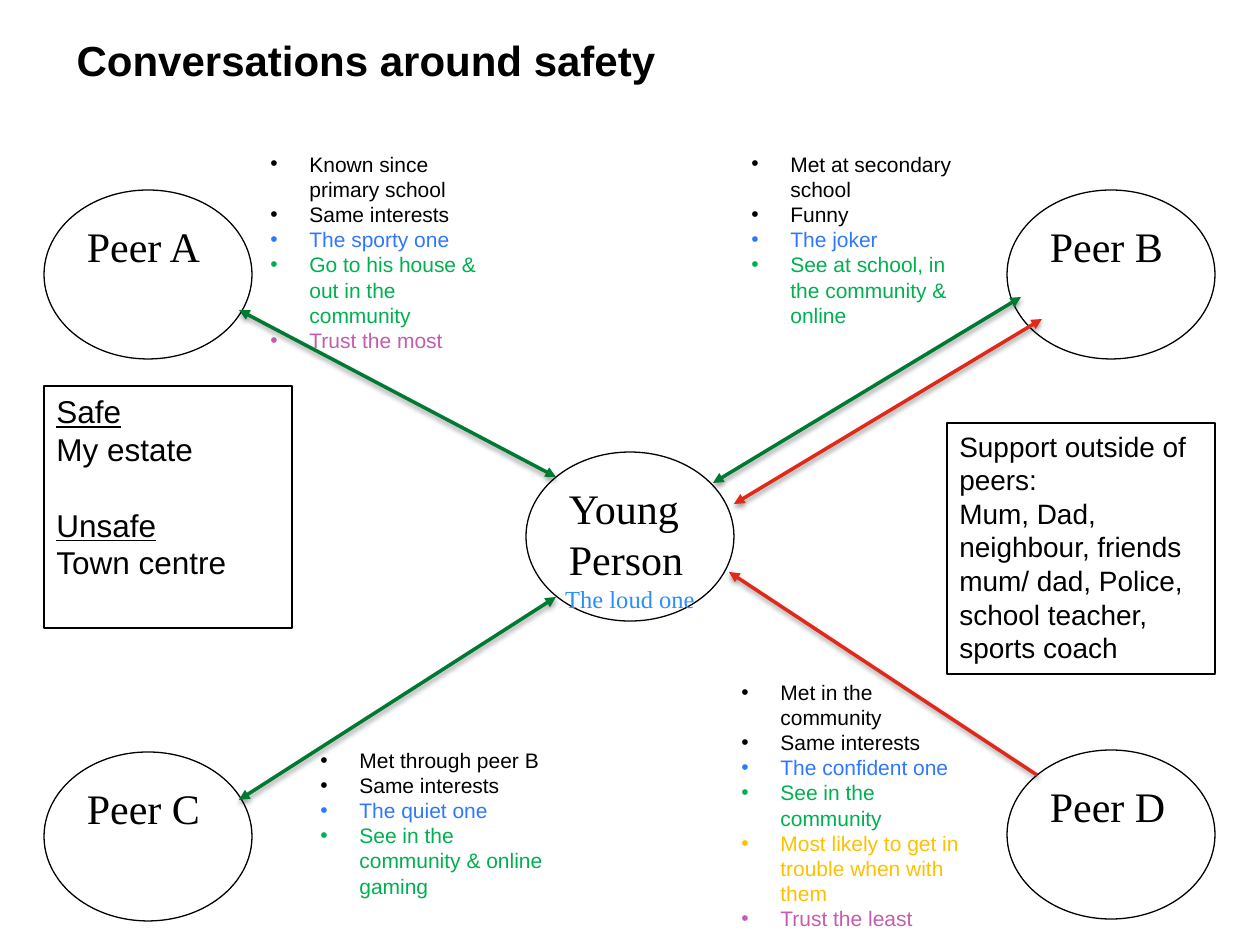
from dataclasses import dataclass

import lxml.etree
import pptx
import pptx.util
from pptx.dml.color import RGBColor
from pptx.enum.shapes import MSO_CONNECTOR, MSO_SHAPE
from pptx.enum.text import MSO_ANCHOR, PP_ALIGN
from pptx.oxml.ns import qn

SCALE = 914400 / 126  # EMU in one px
BLACK = RGBColor(0x00, 0x00, 0x00)
WHITE = RGBColor(0xFF, 0xFF, 0xFF)
BLUE = RGBColor(0x2E, 0x77, 0xFF)
SKY = RGBColor(0x29, 0x8E, 0xFF)
GREEN = RGBColor(0x00, 0xB0, 0x50)
PINK = RGBColor(0xC5, 0x5C, 0xAC)
GOLD = RGBColor(0xFF, 0xC0, 0x00)
SAFE = RGBColor(0x00, 0x7A, 0x33)
RISK = RGBColor(0xE1, 0x29, 0x1A)
SANS, SERIF = "Arial", "Times New Roman"
OVAL_W, OVAL_H = 208, 169
NOTE_W = 248
INDENT = 39


@dataclass
class Person:
    name: str
    left: int
    top: int


@dataclass
class Note:
    left: int
    top: int
    height: int
    lines: list[tuple[str, RGBColor]]


@dataclass
class Panel:
    left: int
    top: int
    width: int
    height: int
    size: int
    lines: list[str]


@dataclass
class Link:
    start: tuple[int, int]
    end: tuple[int, int]
    color: RGBColor
    ends: tuple[str, ...] = ("headEnd", "tailEnd")


PEOPLE = [
    Person("Young Person", 526, 452),
    Person("Peer A", 44, 190),
    Person("Peer B", 1007, 190),
    Person("Peer C", 44, 752),
    Person("Peer D", 1007, 750),
]
NOTES = [
    Note(258, 145, 242, [
        ("Known since primary school", BLACK),
        ("Same interests", BLACK),
        ("The sporty one", BLUE),
        ("Go to his house & out in the community", GREEN),
        ("Trust the most", PINK),
    ]),
    Note(739, 145, 217, [
        ("Met at secondary school", BLACK),
        ("Funny", BLACK),
        ("The joker", BLUE),
        ("See at school, in the community & online", GREEN),
    ]),
    Note(308, 741, 217, [
        ("Met through peer B", BLACK),
        ("Same interests", BLACK),
        ("The quiet one", BLUE),
        ("See in the community & online gaming", GREEN),
    ]),
    Note(729, 673, 292, [
        ("Met in the community", BLACK),
        ("Same interests", BLACK),
        ("The confident one", BLUE),
        ("See in the community", GREEN),
        ("Most likely to get in trouble when with them", GOLD),
        ("Trust the least", PINK),
    ]),
]
PLACES = Panel(44, 386, 248, 242, 18,
               ["Safe", "My estate", "Unsafe", "Town centre"])
SUPPORT = Panel(947, 423, 268, 251, 16, [
    "Support outside of peers:",
    "Mum, Dad, neighbour, friends mum/ dad, Police, school teacher, "
    "sports coach",
])
LINKS = [
    Link((239, 310), (556, 477), SAFE),
    Link((239, 800), (556, 597), SAFE),
    Link((713, 483), (1021, 297), SAFE),
    Link((734, 504), (1042, 319), RISK),
    Link((1037, 775), (729, 572), RISK, ("tailEnd",)),
]


def px(*values: int) -> list[int]:
    return [pptx.util.Emu(round(value * SCALE)) for value in values]


def style(para, size: int, face: str, color: RGBColor = BLACK) -> None:
    para.line_spacing = pptx.util.Pt(size * 1.2)
    for run in para.runs:
        run.font.size = pptx.util.Pt(size)
        run.font.name = face
        run.font.color.rgb = color


def add_form(slide, kind, box: tuple[int, ...], text: str, size: int,
             face: str):
    form = slide.shapes.add_shape(kind, *px(*box))
    form.shadow.inherit = False
    form.fill.background()
    form.line.color.rgb = BLACK
    form.line.width = pptx.util.Pt(0.75)
    frame = form.text_frame
    frame.text = text
    frame.word_wrap = True
    frame.vertical_anchor = MSO_ANCHOR.TOP
    for para in frame.paragraphs:
        para.alignment = PP_ALIGN.LEFT
        style(para, size, face)
    return form


def add_person(slide, person: Person) -> None:
    box = (person.left, person.top, OVAL_W, OVAL_H)
    oval = add_form(slide, MSO_SHAPE.OVAL, box, person.name, 24, SERIF)
    oval.fill.solid()
    oval.fill.fore_color.rgb = WHITE


def add_panel(slide, panel: Panel):
    box = (panel.left, panel.top, panel.width, panel.height)
    return add_form(slide, MSO_SHAPE.RECTANGLE, box, "\n".join(panel.lines),
                    panel.size, SANS)


def add_note(slide, note: Note) -> None:
    box = slide.shapes.add_textbox(
        *px(note.left, note.top, NOTE_W, note.height))
    frame = box.text_frame
    frame.word_wrap = True
    frame.text = "\n".join(text for text, _ in note.lines)
    for para, (_, color) in zip(frame.paragraphs, note.lines):
        style(para, 12, SANS, color)
        props = para._p.get_or_add_pPr()
        indent = px(INDENT)[0]
        props.set("marL", str(indent))
        props.set("indent", str(-indent))
        font = lxml.etree.SubElement(props, qn("a:buFont"))
        font.set("typeface", SANS)
        lxml.etree.SubElement(props, qn("a:buChar")).set("char", "•")


def add_link(slide, link: Link) -> None:
    wire = slide.shapes.add_connector(
        MSO_CONNECTOR.STRAIGHT, *px(*link.start, *link.end))
    wire.line.color.rgb = link.color
    wire.line.width = pptx.util.Pt(2)
    line = wire.line._get_or_add_ln()
    for end in link.ends:
        lxml.etree.SubElement(line, qn(f"a:{end}")).set("type", "triangle")
    # Soft shadow straight below
    effects = lxml.etree.SubElement(wire._element.spPr, qn("a:effectLst"))
    shade = lxml.etree.SubElement(
        effects, qn("a:outerShdw"), blurRad="39400", dist="20300",
        dir="5400000", rotWithShape="0")
    tint = lxml.etree.SubElement(shade, qn("a:srgbClr"), val=str(BLACK))
    lxml.etree.SubElement(tint, qn("a:alpha"), val="38000")


def main() -> None:
    deck = pptx.Presentation()
    deck.slide_width, deck.slide_height = px(1260, 945)
    slide = deck.slides.add_slide(deck.slide_layouts[5])

    # Title
    title = slide.shapes.title
    title.left, title.top, title.width, title.height = px(64, 26, 1132, 90)
    frame = title.text_frame
    frame.text = "Conversations around safety"
    frame.vertical_anchor = MSO_ANCHOR.TOP
    frame.margin_top = px(9)[0]
    head = frame.paragraphs[0]
    head.alignment = PP_ALIGN.LEFT
    style(head, 24, SANS)
    head.runs[0].font.bold = True

    # People and what is said of each peer
    for person in PEOPLE:
        add_person(slide, person)
    for note in NOTES:
        add_note(slide, note)

    # Safe and unsafe places
    lines = add_panel(slide, PLACES).text_frame.paragraphs
    for para in lines[::2]:
        para.runs[0].font.underline = True
    lines[2].space_before = pptx.util.Pt(PLACES.size * 1.2)

    # Links between the people
    for link in LINKS:
        add_link(slide, link)

    # Support and the young person's tag
    add_panel(slide, SUPPORT)
    tag = slide.shapes.add_textbox(*px(552, 578, 156, 43)).text_frame
    tag.word_wrap = False
    tag.text = "The loud one"
    tag.paragraphs[0].alignment = PP_ALIGN.CENTER
    style(tag.paragraphs[0], 14, SERIF, SKY)

    deck.save("out.pptx")


if __name__ == "__main__":
    main()
